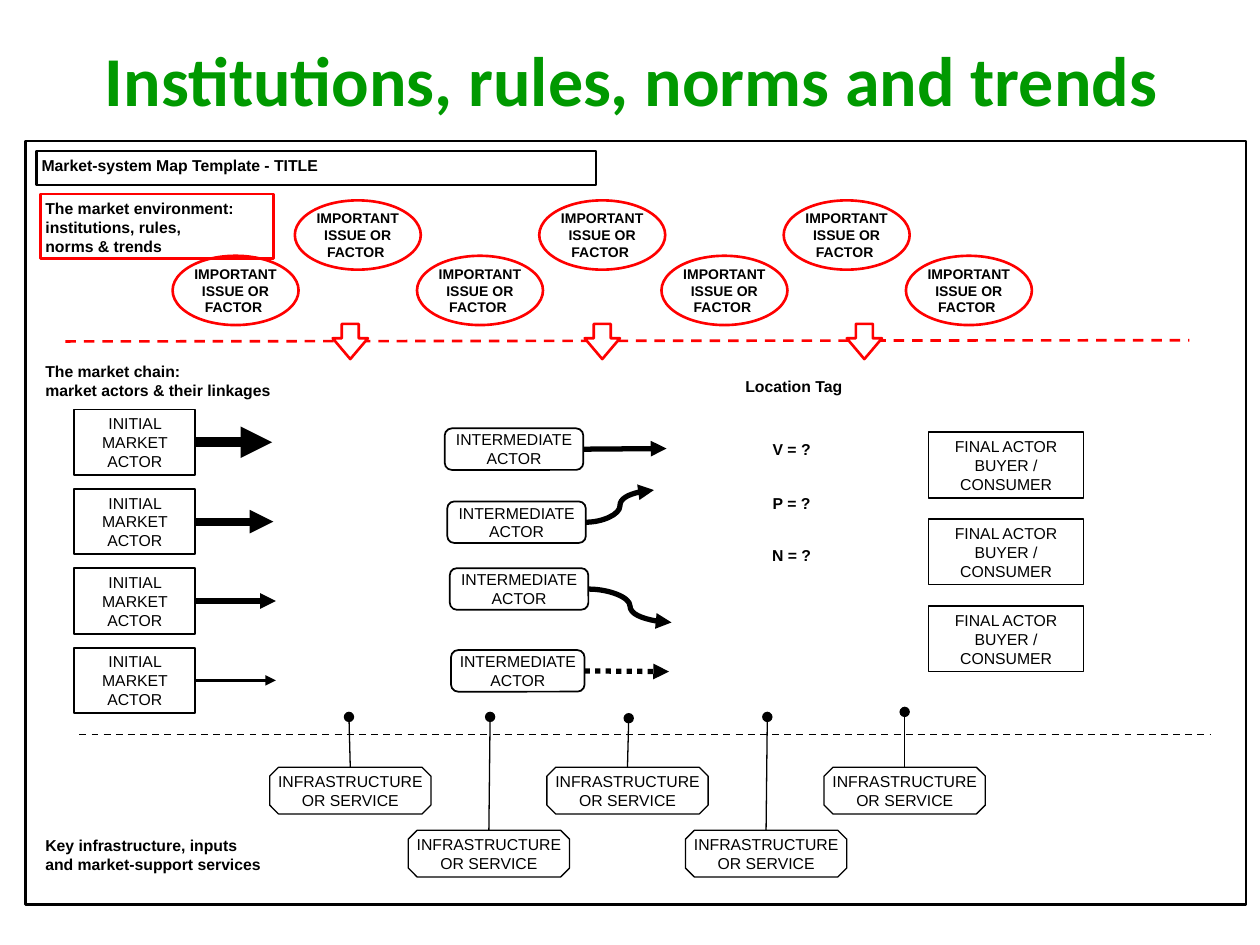
"""Build the market-system map slide."""
from copy import deepcopy

from lxml import etree
from pptx import Presentation
from pptx import util as u
from pptx.dml import color
from pptx.enum import dml, shapes, text
from pptx.oxml import ns

SHAPE, LINK = shapes.MSO_SHAPE, shapes.MSO_CONNECTOR
DASH, DOT = dml.MSO_LINE.DASH, dml.MSO_LINE.ROUND_DOT
BLACK, WHITE, RED, GREEN = "000000", "FFFFFF", "FF0000", "009900"

TITLE = "Institutions, rules, norms and trends"
MAP_TITLE = "Market-system Map Template - TITLE"
ENVIRONMENT = "The market environment: \ninstitutions, rules, \nnorms & trends"
HEADINGS = [
    ("The market chain: \nmarket actors & their linkages", 2.84),
    ("Key infrastructure, inputs \nand market-support services", 6.6),
]
ISSUE = "IMPORTANT ISSUE OR FACTOR "
INITIAL, FINAL = "INITIAL MARKET ACTOR", "FINAL ACTOR BUYER / CONSUMER"
INTERMEDIATE, SERVICE = "INTERMEDIATE ACTOR", "INFRASTRUCTURE OR SERVICE"
DOWN_ARROWS = [2.64, 4.64, 6.72]
DIVIDERS = [((0.52, 2.71), (9.44, 2.7), RED, 1.5), ((0.63, 5.83), (9.61, 5.83), BLACK, 1)]
INITIAL_ARROWS = [(2.16, 6), (2.17, 4.5), (2.19, 3), (2.19, 1.5)]
INTERMEDIATE_ACTORS = [
    ((3.53, 3.4, 1.1, 0.33), (5.29, 3.56), LINK.STRAIGHT, None),
    ((3.55, 3.98, 1.1, 0.33), (5.19, 3.89), LINK.CURVE, None),
    ((3.57, 4.51, 1.1, 0.33), (5.33, 4.94), LINK.CURVE, None),
    ((3.58, 5.16, 1.06, 0.33), (5.31, 5.33), LINK.STRAIGHT, DOT),
]
SERVICE_PINS = [(2.77, 5.69), (3.89, 5.69), (4.99, 5.7), (6.09, 5.69), (7.18, 5.65)]
TAGS = [
    ("Location Tag", (5.61, 2.95, 1.38, 0.26)),
    ("V = ? ", (5.96, 3.45, 0.68, 0.22)),
    ("P = ? ", (5.96, 3.88, 0.68, 0.22)),
    ("N = ? ", (5.96, 4.29, 0.68, 0.22)),
]


def rgb(code):
    return color.RGBColor.from_string(code)


def inches(values):
    return [u.Inches(value) for value in values]


def write(box, words, size=9, font="Arial", ink=BLACK, bold=False, center=True,
          middle=True, insets=(0, 0, 0, 0)):
    frame = box.text_frame
    frame.word_wrap = True
    frame.auto_size = text.MSO_AUTO_SIZE.NONE
    frame.vertical_anchor = text.MSO_ANCHOR.MIDDLE if middle else text.MSO_ANCHOR.TOP
    frame.margin_left, frame.margin_top, frame.margin_right, frame.margin_bottom = inches(insets)
    para = frame.paragraphs[0]
    para.text = words
    para.alignment = text.PP_ALIGN.CENTER if center else text.PP_ALIGN.LEFT
    for span in para.runs:
        span.font.size, span.font.name, span.font.bold = u.Pt(size), font, bold
        span.font.color.rgb = rgb(ink)
    for line_break in para._p.findall(ns.qn("a:br")):
        line_break.append(deepcopy(para.runs[0]._r.rPr))


def add_box(kind, at, line=BLACK, width=1, fill=None, adjust=()):
    box = slide.shapes.add_shape(kind, *inches(at))
    box.shadow.inherit = False
    if fill:
        box.fill.solid()
        box.fill.fore_color.rgb = rgb(fill)
    else:
        box.fill.background()
    if line:
        box.line.color.rgb = rgb(line)
        box.line.width = u.Pt(width)
    else:
        box.line.fill.background()
    for index, value in enumerate(adjust):
        box.adjustments[index] = value
    return box


def add_link(start, end, width, kind=LINK.STRAIGHT, ink=BLACK, dash=None, head=None, source=None):
    link = slide.shapes.add_connector(kind, *inches(start + end))
    link.line.color.rgb = rgb(ink)
    link.line.width = u.Pt(width)
    if dash:
        link.line.dash_style = dash
    if head:
        etree.SubElement(link.line._get_or_add_ln(), ns.qn("a:tailEnd"), type=head)
    etree.SubElement(link._element.spPr, ns.qn("a:effectLst"))
    if source is not None and kind == LINK.STRAIGHT:
        link.begin_connect(source, 3)


def add_actor(kind, at, words, inset, adjust=()):
    box = add_box(kind, at, adjust=adjust)
    write(box, words, insets=(inset,) * 4)
    return box


deck = Presentation()
deck.slide_width, deck.slide_height = inches((10, 7.5))
slide = deck.slides.add_slide(deck.slide_layouts[5])
title = slide.shapes.title
title.left, title.top, title.width, title.height = inches((0.51, 0, 9, 1.25))
write(title, TITLE, size=40, font="Calibri", ink=GREEN, bold=True, insets=(0.1, 0.05, 0.1, 0.05))

label = dict(bold=True, center=False, middle=False)
even = (0.04,) * 4
add_box(SHAPE.RECTANGLE, (0.2, 1.12, 9.69, 6.06), width=1.5)
write(add_box(SHAPE.RECTANGLE, (0.29, 1.2, 4.44, 0.27), width=1.5, fill=WHITE),
      MAP_TITLE, insets=even, **label)
write(add_box(SHAPE.RECTANGLE, (0.32, 1.54, 1.85, 0.51), RED, 1.5),
      ENVIRONMENT, insets=even, **label)
for words, top in HEADINGS:
    heading = slide.shapes.add_textbox(*inches((0.32, top, 2.26, 0.31)))
    write(heading, words, insets=(0.04, 0.03, 0.04, 0), **label)

for index in range(7):
    top = 1.59 if index % 2 else 2.03
    issue = add_box(SHAPE.OVAL, (1.37 + 0.97 * index, top, 1, 0.55), RED, 1.5)
    write(issue, ISSUE, size=8, bold=True)

for start, end, ink, width in DIVIDERS:
    add_link(start, end, width, ink=ink, dash=DASH)
for left in DOWN_ARROWS:
    add_box(SHAPE.DOWN_ARROW, (left, 2.57, 0.28, 0.28), RED, 1.5, WHITE, (0.48, 0.59))

for index, (tip, width) in enumerate(INITIAL_ARROWS):
    top = 3.25 + 0.63 * index
    actor = add_actor(SHAPE.RECTANGLE, (0.59, top, 0.96, 0.52), INITIAL, 0.04)
    add_link((1.55, top + 0.26), (tip, top + 0.26), width, head="triangle", source=actor)

for at, tip, kind, dash in INTERMEDIATE_ACTORS:
    left, top, width, height = at
    actor = add_actor(SHAPE.ROUNDED_RECTANGLE, at, INTERMEDIATE, 0, (0.17,))
    add_link((left + width, top + height / 2), tip, 3, kind, dash=dash,
             head="triangle", source=actor)

for index in range(3):
    add_actor(SHAPE.RECTANGLE, (7.37, 3.43 + 0.69 * index, 1.23, 0.52), FINAL, 0.04)

for index, pin in enumerate(SERVICE_PINS):
    left, top = 2.14 + 1.1 * index, 6.59 if index % 2 else 6.09
    service = add_box(SHAPE.OCTAGON, (left, top, 1.28, 0.37), width=0.75, adjust=(0.19,))
    write(service, SERVICE)
    add_link((left + 0.64, top), pin, 0.75, head="oval")

for words, at in TAGS:
    write(add_box(SHAPE.RECTANGLE, at, line=None, fill=WHITE), words,
          bold=True, middle=False, insets=even)

deck.save("out.pptx")
